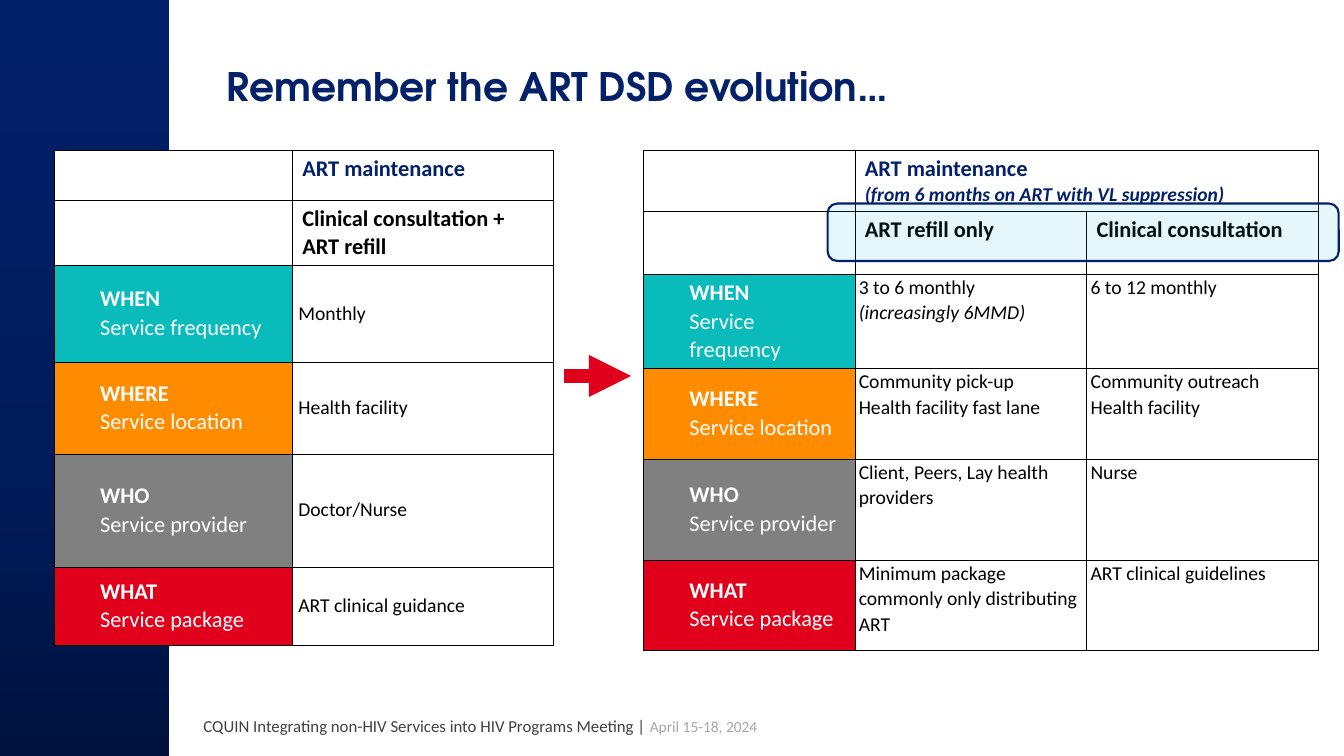
from copy import deepcopy

from lxml import etree
from pptx import Presentation
from pptx.dml.color import RGBColor
from pptx.enum.shapes import MSO_CONNECTOR, MSO_SHAPE
from pptx.enum.text import MSO_ANCHOR, MSO_AUTO_SIZE, PP_ALIGN
from pptx.oxml.ns import qn
from pptx.util import Inches, Pt

RECTANGLE = MSO_SHAPE.RECTANGLE
ROUNDED = MSO_SHAPE.ROUNDED_RECTANGLE
STRAIGHT = MSO_CONNECTOR.STRAIGHT
TOP, MIDDLE = MSO_ANCHOR.TOP, MSO_ANCHOR.MIDDLE
LEFT = PP_ALIGN.LEFT
NO_AUTOFIT = MSO_AUTO_SIZE.NONE

COLORS = {
    "white": "FFFFFF", "black": "000000", "navy": "022169",
    "rail_dark": "00133F", "rail_mid": "001B5A", "rail_light": "022069",
    "teal": "09BBBB", "orange": "FF8C00", "gray": "808080", "red": "E1001B",
    "arrow": "E0001B", "sky": "00B5DE", "footer": "404040", "date": "A6A6A6",
}
BODY_FONT, TITLE_FONT = "Calibri", "TeX Gyre Adventor"
GRID = 100
TABLE_TOP = 19.87
HEADING = {"size": 16, "bold": True}
PADDED = {"margins": (0.06, 0.04, 0.04, 0.06), "anchor": MIDDLE, "spacing": 1.05}
TIGHT = {"margins": (0.04, 0, 0.04, 0), "spacing": 1.07}
QUESTIONS = [
    ("WHEN", "Service frequency", "teal"),
    ("WHERE", "Service location", "orange"),
    ("WHO", "Service provider", "gray"),
    ("WHAT", "Service package", "red"),
]
BEFORE = ["Monthly", "Health facility", "Doctor/Nurse", "ART clinical guidance"]
REFILL = [
    ["3 to 6 monthly", ("(increasingly 6MMD)", {"italic": True})],
    ["Community pick-up", "Health facility fast lane"],
    ["Client, Peers, Lay health providers"],
    ["Minimum package commonly only distributing ART"],
]
CONSULTATION = [
    ["6 to 12 monthly"],
    ["Community outreach", "Health facility"],
    ["Nurse"],
    ["ART clinical guidelines"],
]


def rgb(name):
    return RGBColor.from_string(COLORS[name])


def add_span(para, text, size=14, color="black", bold=False, italic=False,
             font=BODY_FONT):
    span = para.add_run()
    span.text = text
    span.font.name = font
    span.font.size = Pt(size)
    span.font.bold = bold
    span.font.italic = italic
    span.font.color.rgb = rgb(color)
    return span


def write(frame, lines, spacing=None, indent=0, **style):
    for index, line in enumerate(lines):
        para = frame.add_paragraph() if index else frame.paragraphs[0]
        para.alignment = LEFT
        if spacing:
            para.line_spacing = spacing
        if indent:
            para._p.get_or_add_pPr().set("marL", str(Inches(indent)))
        text, changes = line if isinstance(line, tuple) else (line, {})
        add_span(para, text, **{**style, **changes})


class Page:
    def __init__(self, deck):
        self.column = deck.slide_width / GRID
        self.row = deck.slide_height / GRID
        self.slide = deck.slides.add_slide(deck.slide_layouts[5])
        self.shapes = self.slide.shapes

    def place(self, left, top, width, height):
        return (round(left * self.column), round(top * self.row),
                round(width * self.column), round(height * self.row))

    def title(self, text, *area):
        box = self.shapes.title
        box.left, box.top, box.width, box.height = self.place(*area)
        frame = box.text_frame
        frame.auto_size = NO_AUTOFIT
        frame.vertical_anchor = TOP
        write(frame, [text], size=28, color="navy", bold=True, font=TITLE_FONT)

    def shape(self, kind, *area):
        box = self.shapes.add_shape(kind, *self.place(*area))
        box.shadow.inherit = False
        return box

    def rail(self, stops, *area):
        box = self.shape(RECTANGLE, *area)
        box.line.fill.background()
        box.fill.gradient()
        box.fill.gradient_angle = 90
        stop_list = box._element.spPr.find(".//" + qn("a:gsLst"))
        stop_list.insert(1, deepcopy(stop_list[0]))
        for stop, (position, color) in zip(box.fill.gradient_stops, stops):
            stop.position = position
            stop.color.rgb = rgb(color)

    def callout(self, *area):
        box = self.shape(ROUNDED, *area)
        box.fill.solid()
        box.fill.fore_color.rgb = rgb("sky")
        fill_color = box._element.spPr.find(".//" + qn("a:srgbClr"))
        etree.SubElement(fill_color, qn("a:alpha"), val="10000")
        box.line.color.rgb = rgb("rail_light")
        box.line.width = Pt(1.5)

    def footer(self, spans, *area):
        frame = self.shapes.add_textbox(*self.place(*area)).text_frame
        frame.word_wrap = True
        frame.vertical_anchor = MIDDLE
        for text, size, color in spans:
            add_span(frame.paragraphs[0], text, size=size, color=color)

    def arrow(self, start, end, level):
        left, top, width, _ = self.place(start, level, end - start, 0)
        line = self.shapes.add_connector(STRAIGHT, left, top, left + width, top)
        line.line.color.rgb = rgb("arrow")
        line.line.width = Pt(10)
        etree.SubElement(line.line._get_or_add_ln(), qn("a:tailEnd"), type="triangle")
        etree.SubElement(line._element.spPr, qn("a:effectLst"))

    def table(self, left, top, widths, heights):
        area = self.place(left, top, sum(widths), sum(heights))
        table = self.shapes.add_table(len(heights), len(widths), *area).table
        table.first_row = table.horz_banding = False
        for column, width in zip(table.columns, widths):
            column.width = round(width * self.column)
        for row, height in zip(table.rows, heights):
            row.height = round(height * self.row)
        for cell in table.iter_cells():
            self.border(cell)
            self.paint(cell, "white")
        for number, (question, service, color) in enumerate(QUESTIONS, 2):
            cell = table.cell(number, 0)
            self.paint(cell, color)
            self.fill_cell(cell, [question, (service, {"bold": False})],
                           indent=0.4, color="white", **HEADING, **PADDED)
        return table

    def border(self, cell):
        properties = cell._tc.get_or_add_tcPr()
        for side in ("lnL", "lnR", "lnT", "lnB"):
            line = etree.SubElement(properties, qn(f"a:{side}"), w=str(Pt(0.25)))
            fill = etree.SubElement(line, qn("a:solidFill"))
            etree.SubElement(fill, qn("a:srgbClr"), val=COLORS["black"])

    def paint(self, cell, color):
        cell.fill.solid()
        cell.fill.fore_color.rgb = rgb(color)

    def fill_cell(self, cell, lines, margins=(0.1, 0.05, 0.1, 0.05), anchor=TOP,
                  **style):
        (cell.margin_left, cell.margin_top,
         cell.margin_right, cell.margin_bottom) = map(Inches, margins)
        cell.vertical_anchor = anchor
        write(cell.text_frame, lines, **style)


def main():
    deck = Presentation()
    deck.slide_width, deck.slide_height = Inches(13.33), Inches(7.5)
    page = Page(deck)
    page.rail([(0, "rail_dark"), (0.38, "rail_mid"), (1, "rail_light")],
              0, 0, 12.6, 100)
    page.footer([
        ("CQUIN Integrating non-HIV Services into HIV Programs Meeting | ", 12, "footer"),
        ("April 15-18, 2024", 11, "date"),
    ], 14.4, 93.33, 51.75, 5.33)
    page.title("Remember the ART DSD evolution…", 16.13, 7.6, 75, 12.27)

    before = page.table(4, TABLE_TOP, [17.75, 19.4],
                        [6.67, 8.6, 12.8, 12.13, 14.93, 10.4])
    page.fill_cell(before.cell(0, 1), ["ART maintenance"], color="navy", **HEADING)
    page.fill_cell(before.cell(1, 1), ["Clinical consultation + ART refill"], **HEADING)
    for number, answer in enumerate(BEFORE, 2):
        page.fill_cell(before.cell(number, 1), [answer], **PADDED)

    page.arrow(42, 46.95, 49.73)

    after = page.table(47.85, TABLE_TOP, [15.75, 17.25, 17.25],
                       [8.07, 8.27, 12, 12, 13.33, 12])
    heading = after.cell(0, 1)
    heading.merge(after.cell(0, 2))
    page.fill_cell(heading, ["ART maintenance"], color="navy", **HEADING)
    para = heading.text_frame.paragraphs[0]
    para.add_line_break()
    para._p[-1].append(deepcopy(para.runs[0].font._element))
    add_span(para, "(from 6 months on ART with VL suppression)",
             color="navy", bold=True, italic=True)
    models = [("ART refill only", REFILL), ("Clinical consultation", CONSULTATION)]
    for column, (model, answers) in enumerate(models, 1):
        page.fill_cell(after.cell(1, column), [model], **HEADING)
        for number, lines in enumerate(answers, 2):
            page.fill_cell(after.cell(number, column), lines, **TIGHT)

    page.callout(61.58, 26.93, 38.03, 7.6)
    deck.save("out.pptx")


if __name__ == "__main__":
    main()
